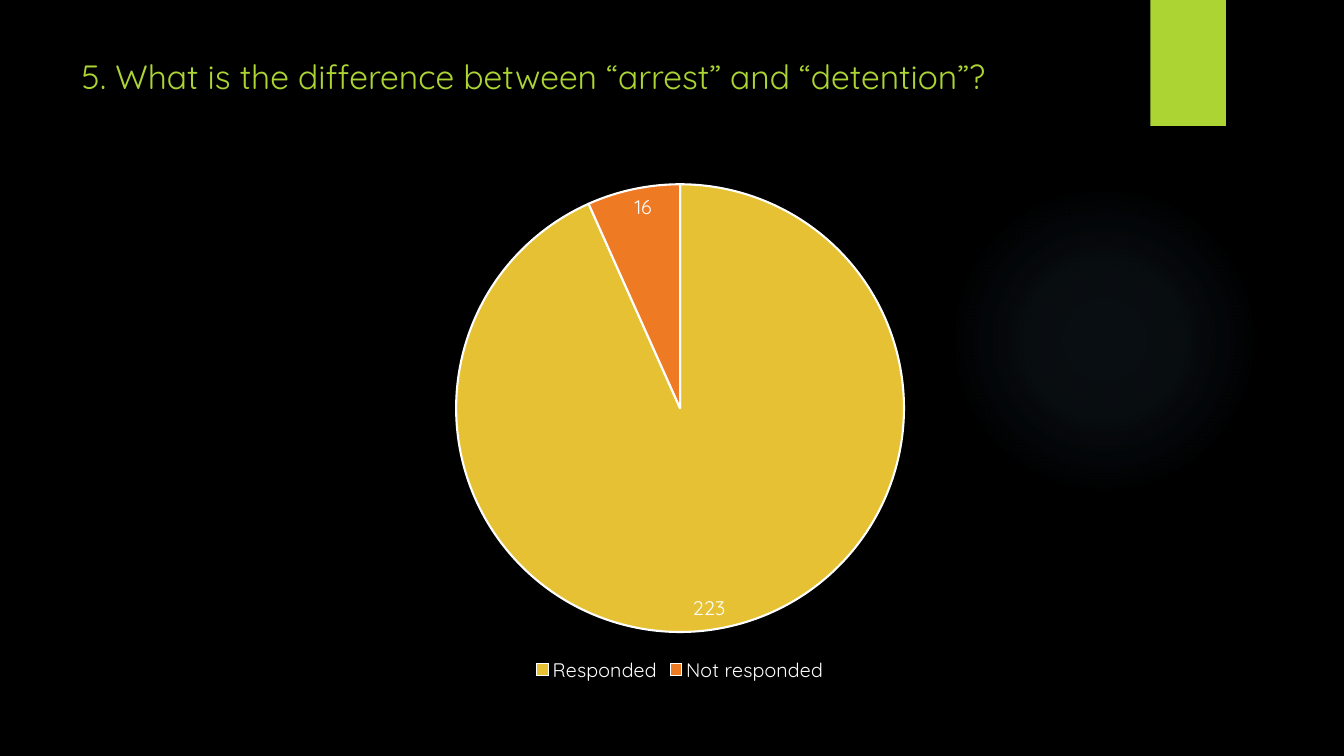
from dataclasses import dataclass

from lxml import etree
from pptx import Presentation
from pptx import util as u
from pptx.chart.data import CategoryChartData
from pptx.dml.color import RGBColor
from pptx.enum import chart as charts, shapes, text
from pptx.oxml import parse_xml
from pptx.oxml.ns import nsdecls, qn

WIDTH, HEIGHT = 13.33, 7.5
FONT = "Quicksand"
GREEN, YELLOW, ORANGE = "ACD433", "E6C133", "EF7A24"
BLACK, WHITE, GLOW_BLUE = "000000", "FFFFFF", "7AC4F0"


@dataclass
class Area:
    """A rectangle in inches."""
    left: float
    top: float
    width: float
    height: float

    def lengths(self) -> tuple:
        return tuple(u.Inches(n) for n in (self.left, self.top, self.width, self.height))


@dataclass
class Answer:
    label: str
    count: int | None
    color: str


TITLE_AREA = Area(0.71, 0.5, 10.29, 1.53)
CHART_AREA = Area(1.47, 1.69, 10.55, 5.12)
GLOW_AREA = Area(9.41, 1.83, 3.08, 3.08)
TAB_AREA = Area(11.41, 0, 0.75, 1.25)
GLOW_STOPS = [(0, 7), (36, 6), (69, 0)]
ANSWERS = [
    Answer("5.What is the difference between “arrest” and “detention”?", None, GREEN),
    Answer("Responded", 223, YELLOW),
    Answer("Not responded", 16, ORANGE),
]


def rgb(color: str) -> RGBColor:
    return RGBColor.from_string(color)


def style_font(font, size: float, color: str) -> None:
    font.name = FONT
    font.size = u.Pt(size)
    font.color.rgb = rgb(color)


def add_ornament(page, kind, area: Area, color: str):
    shape = page.shapes.add_shape(kind, *area.lengths())
    shape.shadow.inherit = False
    shape.fill.solid()
    shape.fill.fore_color.rgb = rgb(color)
    shape.line.fill.background()
    return shape


def fade_from_center(shape, color: str) -> None:
    """Replace the solid fill by a radial one that fades out along GLOW_STOPS."""
    stops = "".join(
        f'<a:gs pos="{pos * 1000}"><a:srgbClr val="{color}">'
        f'<a:alpha val="{alpha * 1000}"/></a:srgbClr></a:gs>'
        for pos, alpha in GLOW_STOPS
    )
    gradient = parse_xml(
        f'<a:gradFill {nsdecls("a")} rotWithShape="1"><a:gsLst>{stops}</a:gsLst>'
        '<a:path path="circle"><a:fillToRect l="50000" t="50000" r="50000" b="50000"/>'
        '</a:path></a:gradFill>'
    )
    properties = shape.element.spPr
    properties.replace(properties.find(qn("a:solidFill")), gradient)


def write_title(page) -> None:
    title = page.shapes.title
    title.left, title.top, title.width, title.height = TITLE_AREA.lengths()
    frame = title.text_frame
    frame.word_wrap = True
    frame.auto_size = text.MSO_AUTO_SIZE.NONE
    frame.vertical_anchor = text.MSO_ANCHOR.TOP
    para = frame.paragraphs[0]
    para.alignment = text.PP_ALIGN.LEFT
    span = para.add_run()
    span.text = "5. What is the difference between “arrest” and “detention”?"
    style_font(span.font, 24, GREEN)


def hide_legend_entry(legend, index: int) -> None:
    entry = etree.Element(qn("c:legendEntry"))
    etree.SubElement(entry, qn("c:idx")).set("val", str(index))
    etree.SubElement(entry, qn("c:delete")).set("val", "1")
    legend._element.find(qn("c:legendPos")).addnext(entry)


def add_answer_pie(page) -> None:
    data = CategoryChartData()
    data.categories = [answer.label for answer in ANSWERS]
    data.add_series("Series 1", [answer.count for answer in ANSWERS])
    pie = page.shapes.add_chart(charts.XL_CHART_TYPE.PIE, *CHART_AREA.lengths(), data).chart
    style_font(pie.font, 10, WHITE)
    pie.has_title = False

    pie.has_legend = True
    pie.legend.position = charts.XL_LEGEND_POSITION.BOTTOM
    pie.legend.include_in_layout = False
    style_font(pie.legend.font, 14, WHITE)
    hide_legend_entry(pie.legend, 0)

    plot = pie.plots[0]
    plot.vary_by_categories = True
    series = plot.series[0]
    for index, answer in enumerate(ANSWERS):
        slice_format = series.points[index].format
        slice_format.fill.solid()
        slice_format.fill.fore_color.rgb = rgb(answer.color)
        slice_format.line.color.rgb = rgb(WHITE)
        slice_format.line.width = u.Pt(1.5)

    labels = series.data_labels
    labels.show_value = True
    labels.show_percentage = False
    labels.position = charts.XL_LABEL_POSITION.INSIDE_END
    style_font(labels.font, 14, WHITE)


def main() -> None:
    deck = Presentation()
    deck.slide_width, deck.slide_height = u.Inches(WIDTH), u.Inches(HEIGHT)
    page = deck.slides.add_slide(deck.slide_layouts[5])
    page.background.fill.solid()
    page.background.fill.fore_color.rgb = rgb(BLACK)

    glow = add_ornament(page, shapes.MSO_SHAPE.OVAL, GLOW_AREA, GLOW_BLUE)
    fade_from_center(glow, GLOW_BLUE)
    add_ornament(page, shapes.MSO_SHAPE.RECTANGLE, TAB_AREA, GREEN)
    write_title(page)
    add_answer_pie(page)
    deck.save("out.pptx")


if __name__ == "__main__":
    main()
